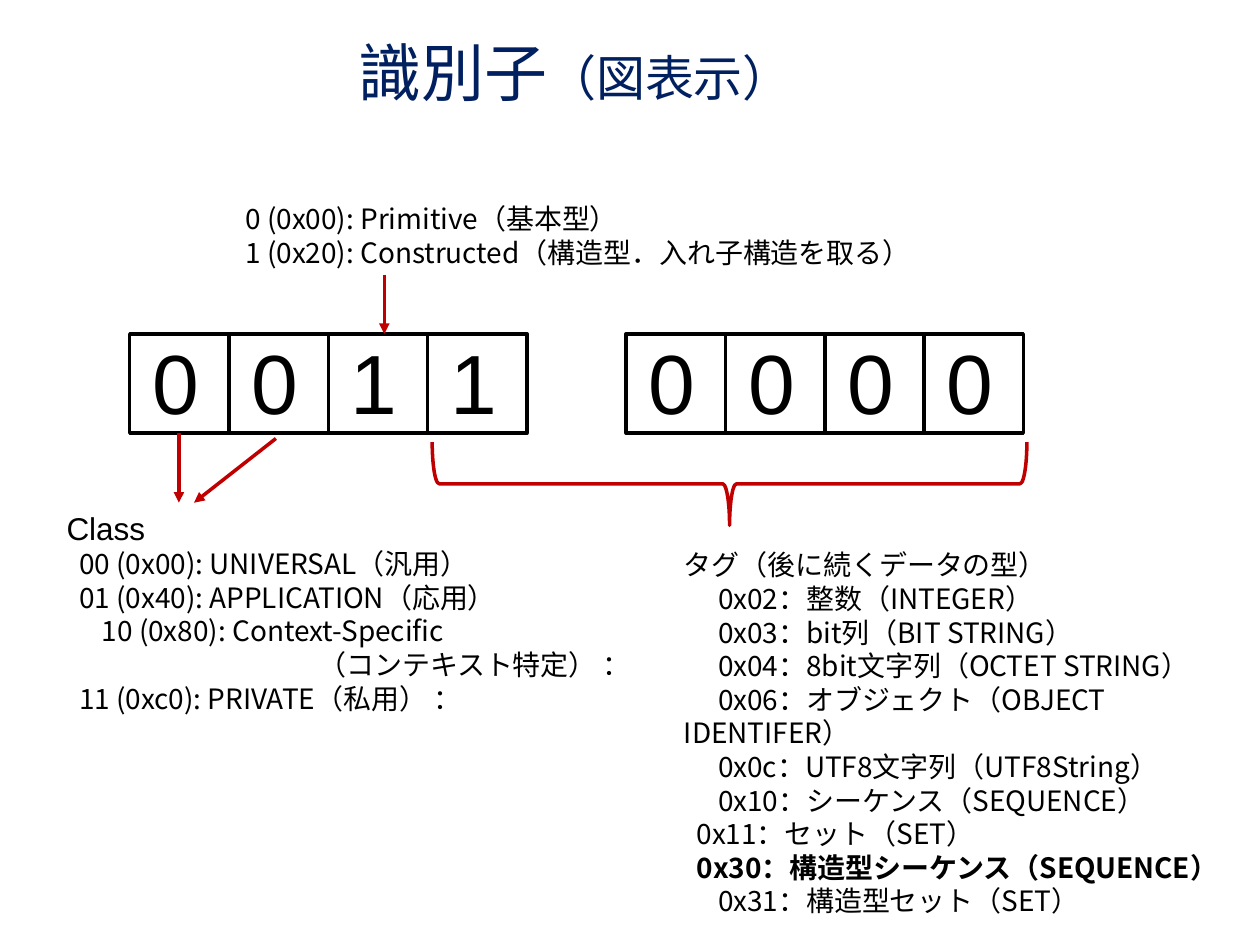
"""Build a slide that charts the bits of an ASN.1 identifier octet."""
from lxml import etree
from pptx import Presentation
from pptx.dml.color import RGBColor
from pptx.enum import shapes, text
from pptx.oxml import ns
from pptx.util import Inches, Pt

NAVY, BLACK, RED = "002060", "000000", "C00000"
LATIN, CJK = "Arial", "Noto Sans CJK JP"

TITLE = [[("識別子", {"size": 36}), ("（図表示）", {"size": 28})]]
NIBBLES = [(1.03, "0011"), (4.97, "0000")]
CELL, CELL_TOP = 0.788, 2.65
ARROWS = [
    ((1.42, 3.44), (1.42, 3.99)),
    ((2.19, 3.48), (1.54, 3.99)),
    ((3.05, 2.18), (3.05, 2.65)),
]
FORMS = [
    ("0 (0x00): Primitive（基本型）", {}),
    ("1 (0x20): Constructed（構造型．入れ子構造を取る）", {}),
]
CLASSES = [
    ("Class", {"size": 18, "font": LATIN}),
    ("00 (0x00): UNIVERSAL（汎用）", {"indent": 0.1}),
    ("01 (0x40): APPLICATION（応用）", {"indent": 0.1}),
    ("10 (0x80):\u00a0Context-Specific", {"indent": 0.28}),
    ("（コンテキスト特定） ：", {"indent": 2}),
    ("11 (0xc0): PRIVATE（私用） ：", {"indent": 0.1}),
]
TAGS = [
    ("タグ（後に続くデータの型）", {"font": LATIN}),
    ("0x02：整数（INTEGER）", {"indent": 0.27}),
    ("0x03：bit列（BIT STRING）", {"indent": 0.27}),
    ("0x04：8bit文字列（OCTET STRING）", {"indent": 0.27}),
    ("0x06：オブジェクト（OBJECT IDENTIFER）", {"indent": 0.27}),
    ("0x0c：UTF8文字列（UTF8String）", {"indent": 0.27}),
    ("0x10：シーケンス（SEQUENCE）", {"indent": 0.27}),
    ("0x11：セット（SET）", {"indent": 0.1}),
    ("0x30：構造型シーケンス（SEQUENCE）", {"indent": 0.1, "bold": True}),
    ("0x31：構造型セット（SET）", {"indent": 0.27}),
]


def rgb(value):
    return RGBColor.from_string(value)


def add_run(paragraph, words, size=16, font=CJK, color=BLACK, bold=False, indent=0):
    run = paragraph.add_run()
    run.text = words
    run.font.size, run.font.name, run.font.bold = Pt(size), font, bold
    run.font.color.rgb = rgb(color)
    east_asian = etree.SubElement(run.font._element, ns.qn("a:ea"))
    east_asian.set("typeface", CJK)
    if indent:
        properties = paragraph._p.get_or_add_pPr()
        properties.set("marL", "0")
        properties.set("indent", str(Inches(indent)))


def add_text(slide, box, paragraphs, align=text.PP_ALIGN.LEFT,
             anchor=text.MSO_ANCHOR.TOP, margin_right=0.1, **style):
    frame = slide.shapes.add_textbox(*map(Inches, box)).text_frame
    frame.word_wrap = True
    frame.vertical_anchor = anchor
    frame.margin_right = Inches(margin_right)
    for index, runs in enumerate(paragraphs):
        paragraph = frame.add_paragraph() if index else frame.paragraphs[0]
        paragraph.alignment = align
        for words, changes in runs:
            add_run(paragraph, words, **{**style, **changes})


def add_outline(slide, kind, box, color):
    outline = slide.shapes.add_shape(kind, *map(Inches, box))
    outline.shadow.inherit = False
    outline.fill.background()
    outline.line.color.rgb = rgb(color)
    outline.line.width = Pt(2)
    return outline


def add_arrow(slide, start, end):
    arrow = slide.shapes.add_connector(
        shapes.MSO_CONNECTOR.STRAIGHT, *map(Inches, start + end))
    arrow.line.color.rgb = rgb(RED)
    arrow.line.width = Pt(2)
    tip = etree.SubElement(arrow.line._get_or_add_ln(), ns.qn("a:tailEnd"))
    tip.set("type", "triangle")
    etree.SubElement(arrow._element.spPr, ns.qn("a:effectLst"))


def main():
    deck = Presentation()
    deck.slide_width, deck.slide_height = Inches(10), Inches(7.5)
    slide = deck.slides.add_slide(deck.slide_layouts[6])

    add_text(slide, (0.51, 0.13, 9, 0.87), TITLE, align=text.PP_ALIGN.CENTER,
             anchor=text.MSO_ANCHOR.MIDDLE, margin_right=0.99, font=LATIN, color=NAVY)

    for nibble_left, bits in NIBBLES:
        for place, bit in enumerate(bits):
            left = nibble_left + place * CELL
            add_outline(slide, shapes.MSO_SHAPE.RECTANGLE,
                        (left, CELL_TOP, CELL, CELL), BLACK)
            add_text(slide, (left + 0.08, CELL_TOP - 0.08, 0.58, 0.91),
                     [[(bit, {})]], size=48, font=LATIN)

    for start, end in ARROWS:
        add_arrow(slide, start, end)
    brace = add_outline(slide, shapes.MSO_SHAPE.RIGHT_BRACE,
                        (5.46, 1.48, 0.66, 4.72), RED)
    brace.rotation = 90

    for box, lines in [
        ((0.43, 3.99, 4.8, 1.75), CLASSES),
        ((5.33, 4.3, 4.69, 2.79), TAGS),
        ((1.85, 1.55, 5.7, 0.64), FORMS),
    ]:
        add_text(slide, box, [[line] for line in lines])

    deck.save("out.pptx")


if __name__ == "__main__":
    main()
